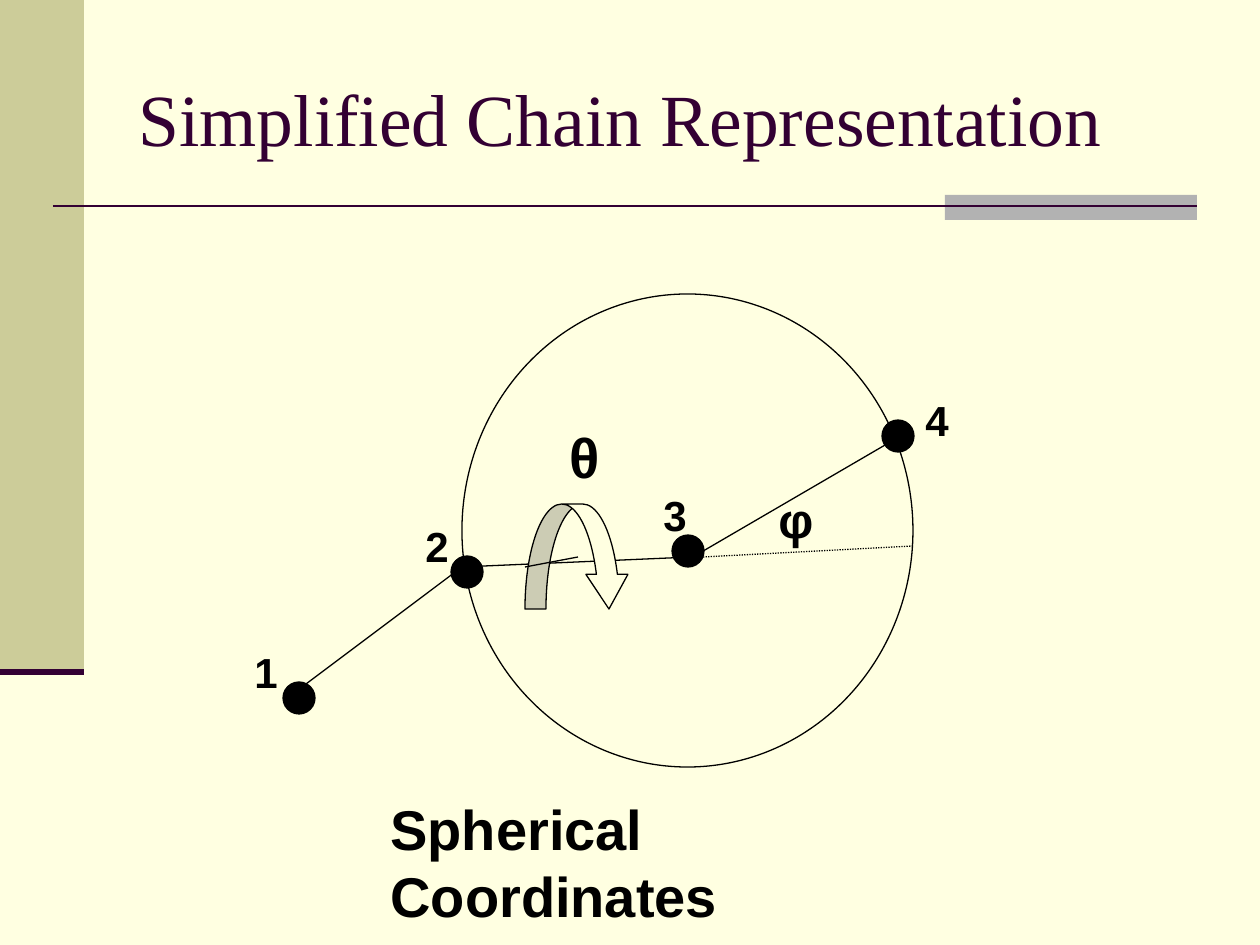
"""Build the simplified chain representation slide."""
from typing import NamedTuple

from lxml import etree
from pptx import Presentation
from pptx.dml.color import RGBColor
from pptx.enum.dml import MSO_LINE
from pptx.enum.shapes import MSO_CONNECTOR, MSO_SHAPE
from pptx.enum.text import MSO_ANCHOR, MSO_AUTO_SIZE, PP_ALIGN
from pptx.oxml.ns import qn
from pptx.util import Pt

RECT, OVAL, ARROW = MSO_SHAPE.RECTANGLE, MSO_SHAPE.OVAL, MSO_SHAPE.CURVED_DOWN_ARROW
STRAIGHT, DOTTED = MSO_CONNECTOR.STRAIGHT, MSO_LINE.ROUND_DOT
MIDDLE, LEFT = MSO_ANCHOR.MIDDLE, PP_ALIGN.LEFT
GROW = MSO_AUTO_SIZE.SHAPE_TO_FIT_TEXT
SCALE = 914400 / 126
CREAM, OLIVE, GREY, PURPLE, BLACK = "FFFFE1", "CCCC99", "B2B2B2", "330033", "000000"
ATOM_SIZE = 32


class Box(NamedTuple):
    """Position and size in px."""
    x: int
    y: int
    w: int
    h: int


class Shape(NamedTuple):
    """A preset shape with optional fill and outline."""
    kind: int
    box: Box
    fill: str | None = None
    line: str | None = None


class Line(NamedTuple):
    """A straight line between two points."""
    start: tuple[int, int]
    end: tuple[int, int]
    color: str = BLACK
    width: float = 0.75
    dash: int | None = None


class Label(NamedTuple):
    """A bold text label."""
    text: str
    box: Box
    size: int = 24
    wrap: bool = False


BACKDROP = [
    Shape(RECT, Box(0, 0, 84, 672), OLIVE),
    Shape(RECT, Box(945, 195, 252, 25), GREY),
]
RULES = [
    Line((53, 206), (1197, 206), PURPLE, 1.5),
    Line((0, 672), (84, 672), PURPLE, 3.5),
]
CHAIN = [(294, 693), (462, 567), (693, 557), (892, 441)]
ATOMS = [(283, 682), (451, 556), (672, 535), (882, 420)]
CIRCLE = Shape(OVAL, Box(462, 294, 451, 473), None, BLACK)
TWIST = Shape(ARROW, Box(525, 504, 105, 105), CREAM, BLACK)
TWIST_ADJUSTMENTS = (0.2, 0.4, 0.33)
ANGLE_LINES = [
    Line((525, 567), (578, 557)),
    Line((703, 557), (913, 546), dash=DOTTED),
]
LABELS = [
    Label("1", Box(242, 640, 49, 63)),
    Label("2", Box(413, 514, 49, 63)),
    Label("3", Box(651, 483, 49, 63)),
    Label("4", Box(913, 388, 49, 63)),
    Label("θ", Box(557, 416, 54, 79), 32),
    Label("φ", Box(766, 483, 50, 72), 28),
    Label("Spherical Coordinates", Box(378, 788, 600, 147), 32, True),
]


def px(value: int) -> int:
    """Convert px to EMU."""
    return round(value * SCALE)


def rgb(color: str) -> RGBColor:
    """Convert a hex string to a colour."""
    return RGBColor.from_string(color)


def set_all(target, values: dict) -> None:
    """Set attributes from a dict."""
    for name, value in values.items():
        setattr(target, name, value)


def paint(sp, fill: str | None, line: str | None) -> None:
    """Apply fill and outline without a shadow."""
    sp.shadow.inherit = False
    if fill:
        sp.fill.solid()
        sp.fill.fore_color.rgb = rgb(fill)
    else:
        sp.fill.background()
    if line:
        sp.line.color.rgb = rgb(line)
        sp.line.width = Pt(0.75)
    else:
        sp.line.fill.background()


def add_shape(s, shape: Shape):
    """Draw a preset shape."""
    sp = s.shapes.add_shape(shape.kind, *map(px, shape.box))
    paint(sp, shape.fill, shape.line)
    return sp


def add_line(s, line: Line) -> None:
    """Draw a straight connector without a shadow."""
    sp = s.shapes.add_connector(STRAIGHT, *map(px, line.start + line.end))
    sp.line.color.rgb = rgb(line.color)
    set_all(sp.line, {"width": Pt(line.width), "dash_style": line.dash})
    etree.SubElement(sp._element.spPr, qn("a:effectLst"))


def add_chain(s, points: list[tuple[int, int]]) -> None:
    """Draw the open line of bonds."""
    builder = s.shapes.build_freeform(*points[0], scale=SCALE)
    builder.add_line_segments(points[1:], close=False)
    paint(builder.convert_to_shape(), None, BLACK)


def write(tf, text: str, color: str, font: dict) -> None:
    """Write one formatted left-aligned run."""
    p = tf.paragraphs[0]
    p.alignment = LEFT
    r = p.add_run()
    r.text = text
    set_all(r.font, font)
    r.font.color.rgb = rgb(color)


def add_label(s, label: Label) -> None:
    """Draw a text label."""
    tf = s.shapes.add_textbox(*map(px, label.box)).text_frame
    set_all(tf, {"word_wrap": label.wrap, "auto_size": GROW})
    write(tf, label.text, BLACK, {"name": "Arial", "size": Pt(label.size), "bold": True})


def add_title(s, text: str, box: Box) -> None:
    """Place and format the title placeholder."""
    sp = s.shapes.title
    set_all(sp, dict(zip(("left", "top", "width", "height"), map(px, box))))
    set_all(sp.text_frame, {"vertical_anchor": MIDDLE, "word_wrap": True})
    write(sp.text_frame, text, PURPLE, {"name": "Times New Roman", "size": Pt(42)})


def main() -> None:
    """Build and save the slide."""
    prs = Presentation()
    set_all(prs, {"slide_width": px(1260), "slide_height": px(945)})
    s = prs.slides.add_slide(prs.slide_layouts[5])
    s.background.fill.solid()
    s.background.fill.fore_color.rgb = rgb(CREAM)
    for shape in BACKDROP:
        add_shape(s, shape)
    for line in RULES:
        add_line(s, line)
    add_chain(s, CHAIN)
    add_shape(s, CIRCLE)
    for x, y in ATOMS:
        add_shape(s, Shape(OVAL, Box(x, y, ATOM_SIZE, ATOM_SIZE), BLACK, BLACK))
    twist = add_shape(s, TWIST)
    for i, value in enumerate(TWIST_ADJUSTMENTS):
        twist.adjustments[i] = value
    for line in ANGLE_LINES:
        add_line(s, line)
    for label in LABELS:
        add_label(s, label)
    add_title(s, "Simplified Chain Representation", Box(126, 38, 1071, 158))
    prs.save("out.pptx")


if __name__ == "__main__":
    main()
